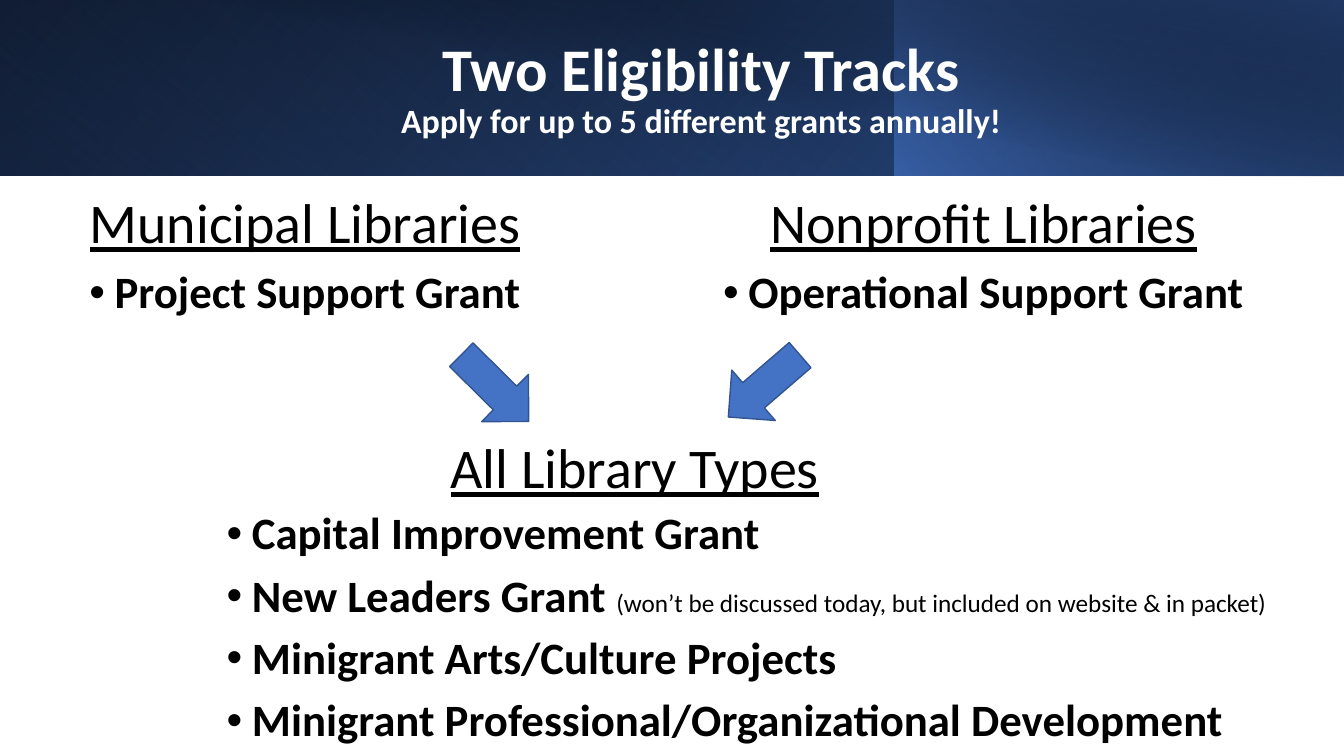
from lxml import etree
from pptx import Presentation
from pptx.dml.color import RGBColor
from pptx.enum.shapes import MSO_SHAPE
from pptx.enum.text import MSO_ANCHOR, MSO_AUTO_SIZE, PP_ALIGN
from pptx.oxml.ns import qn
from pptx.util import Inches, Pt

FONT = "Calibri"
WHITE = RGBColor(0xFF, 0xFF, 0xFF)
BLACK = RGBColor(0x00, 0x00, 0x00)
BLUE = RGBColor(0x44, 0x72, 0xC4)
BLUE_EDGE = RGBColor(0x32, 0x54, 0x91)
BLUE_DARK = RGBColor(0x2F, 0x55, 0x97)
NAVY = RGBColor(0x20, 0x38, 0x64)
HEADING, ITEM, NOTE = 40, 32, 18
TEXT_HEIGHT = 4.97


def place(sp, box):
    sp.left, sp.top, sp.width, sp.height = (Inches(v) for v in box)


def add_run(p, text, size, color=BLACK, bold=False, underline=False):
    r = p.add_run()
    r.text = text
    r.font.name, r.font.size = FONT, Pt(size)
    r.font.bold, r.font.underline = bold, underline
    r.font.color.rgb = color


def format_paragraph(p, align, bullet=False):
    p.alignment = align
    p.line_spacing = 0.9
    p.space_before = Pt(10)
    pPr = p._p.get_or_add_pPr()
    indent = Inches(0.25) if bullet else 0
    pPr.set("marL", str(indent))
    pPr.set("indent", str(-indent))
    if bullet:
        etree.SubElement(pPr, qn("a:buFont")).set("typeface", "Arial")
        etree.SubElement(pPr, qn("a:buChar")).set("char", "•")
    else:
        etree.SubElement(pPr, qn("a:buNone"))


def add_gradient(slide, box, angle, stops, rotation=0, flip=True):
    """Add a rectangle whose stops are (position, colour, opacity in percent)."""
    sp = slide.shapes.add_shape(MSO_SHAPE.RECTANGLE, *(Inches(v) for v in box))
    sp.shadow.inherit = False
    sp.line.fill.background()
    sp.rotation = rotation
    sp.fill.gradient()
    sp.fill.gradient_angle = 360 - angle
    for stop, (position, color, _) in zip(sp.fill.gradient_stops, stops):
        stop.position = position / 100
        stop.color.rgb = color
    spPr = sp._element.spPr
    for clr, (_, _, opacity) in zip(spPr.iter(qn("a:srgbClr")), stops):
        etree.SubElement(clr, qn("a:alpha")).set("val", str(opacity * 1000))
    if flip:
        spPr.find(qn("a:xfrm")).set("flipH", "1")
    return sp


def add_banner(slide, box):
    x, y, w, h = box
    split = 8.87
    layers = [
        add_gradient(slide, box, 140, [(0, BLACK, 100), (100, BLUE_DARK, 100)]),
        add_gradient(slide, (x, y, split, h), 230,
                     [(20, BLUE, 0), (100, NAVY, 55)], rotation=180),
        add_gradient(slide, (x + split, y, w - split, h), 220,
                     [(0, BLUE, 66), (100, BLACK, 30)]),
        add_gradient(slide, (x + 0.5, y, w - 0.5, h + 0.01), 280,
                     [(50, BLACK, 0), (99, NAVY, 52)], flip=False),
    ]
    # Send the layers behind the placeholders
    for i, sp in enumerate(layers):
        slide.shapes._spTree.insert(2 + i, sp._element)

    # Title and subtitle
    title = slide.shapes.title
    place(title, (x + 1.29, y + 0.33, 11.33, 1.13))
    tf = title.text_frame
    tf.auto_size = MSO_AUTO_SIZE.NONE
    tf.vertical_anchor = MSO_ANCHOR.MIDDLE
    p = tf.paragraphs[0]
    p.alignment = PP_ALIGN.CENTER
    p.line_spacing = 0.9
    add_run(p, "Two Eligibility Tracks", 43.2, WHITE, bold=True)
    p.add_line_break()
    add_run(p, "Apply for up to 5 different grants annually!", 24.3, WHITE, bold=True)


def prepare_text(sp, box):
    place(sp, box)
    tf = sp.text_frame
    tf.word_wrap = True
    tf.auto_size = MSO_AUTO_SIZE.NONE
    tf.vertical_anchor = MSO_ANCHOR.TOP
    return tf


def fill_track(sp, box, heading, grant):
    tf = prepare_text(sp, box)
    p = tf.paragraphs[0]
    format_paragraph(p, PP_ALIGN.CENTER)
    add_run(p, heading, HEADING, underline=True)
    p = tf.add_paragraph()
    format_paragraph(p, PP_ALIGN.CENTER, bullet=True)
    add_run(p, grant, ITEM, bold=True)


def add_arrow(slide, box, rotation):
    sp = slide.shapes.add_shape(MSO_SHAPE.DOWN_ARROW, *(Inches(v) for v in box))
    sp.shadow.inherit = False
    sp.rotation = rotation
    sp.fill.solid()
    sp.fill.fore_color.rgb = BLUE
    sp.line.color.rgb = BLUE_EDGE
    sp.line.width = Pt(1)


def add_shared_grants(slide, box, heading, grants):
    x, y, w, h = box
    # Heading
    tf = prepare_text(slide.shapes.add_textbox(0, 0, 0, 0), (x + 2.22, y, 6.94, h))
    p = tf.paragraphs[0]
    format_paragraph(p, PP_ALIGN.LEFT)
    add_run(p, heading, HEADING, underline=True)
    # Grant list
    tf = prepare_text(slide.shapes.add_textbox(0, 0, 0, 0), (x, y + 0.7, w, h))
    for i, (grant, note) in enumerate(grants):
        p = tf.add_paragraph() if i else tf.paragraphs[0]
        format_paragraph(p, PP_ALIGN.LEFT, bullet=True)
        add_run(p, grant, ITEM, bold=True)
        if note:
            add_run(p, note, NOTE)


def main():
    prs = Presentation()
    prs.slide_width, prs.slide_height = Inches(13.33), Inches(7.5)
    slide = prs.slides.add_slide(prs.slide_layouts[3])
    add_banner(slide, (0, 0, 13.33, 1.74))

    # Two tracks
    fill_track(slide.placeholders[1], (0.57, 1.89, 4.91, TEXT_HEIGHT),
               "Municipal Libraries", "Project Support Grant")
    fill_track(slide.placeholders[2], (6.92, 1.89, 5.67, TEXT_HEIGHT),
               "Nonprofit Libraries", "Operational Support Grant")

    # Arrows to the shared list
    add_arrow(slide, (4.58, 3.38, 0.66, 0.94), 314.7)
    add_arrow(slide, (7.25, 3.36, 0.66, 0.94), 49.2)

    add_shared_grants(slide, (2.15, 4.32, 10.62, TEXT_HEIGHT), "All Library Types", [
        ("Capital Improvement Grant", ""),
        ("New Leaders Grant ",
         "(won’t be discussed today, but included on website & in packet)"),
        ("Minigrant Arts/Culture Projects", ""),
        ("Minigrant Professional/Organizational Development", ""),
    ])
    prs.save("out.pptx")


if __name__ == "__main__":
    main()
